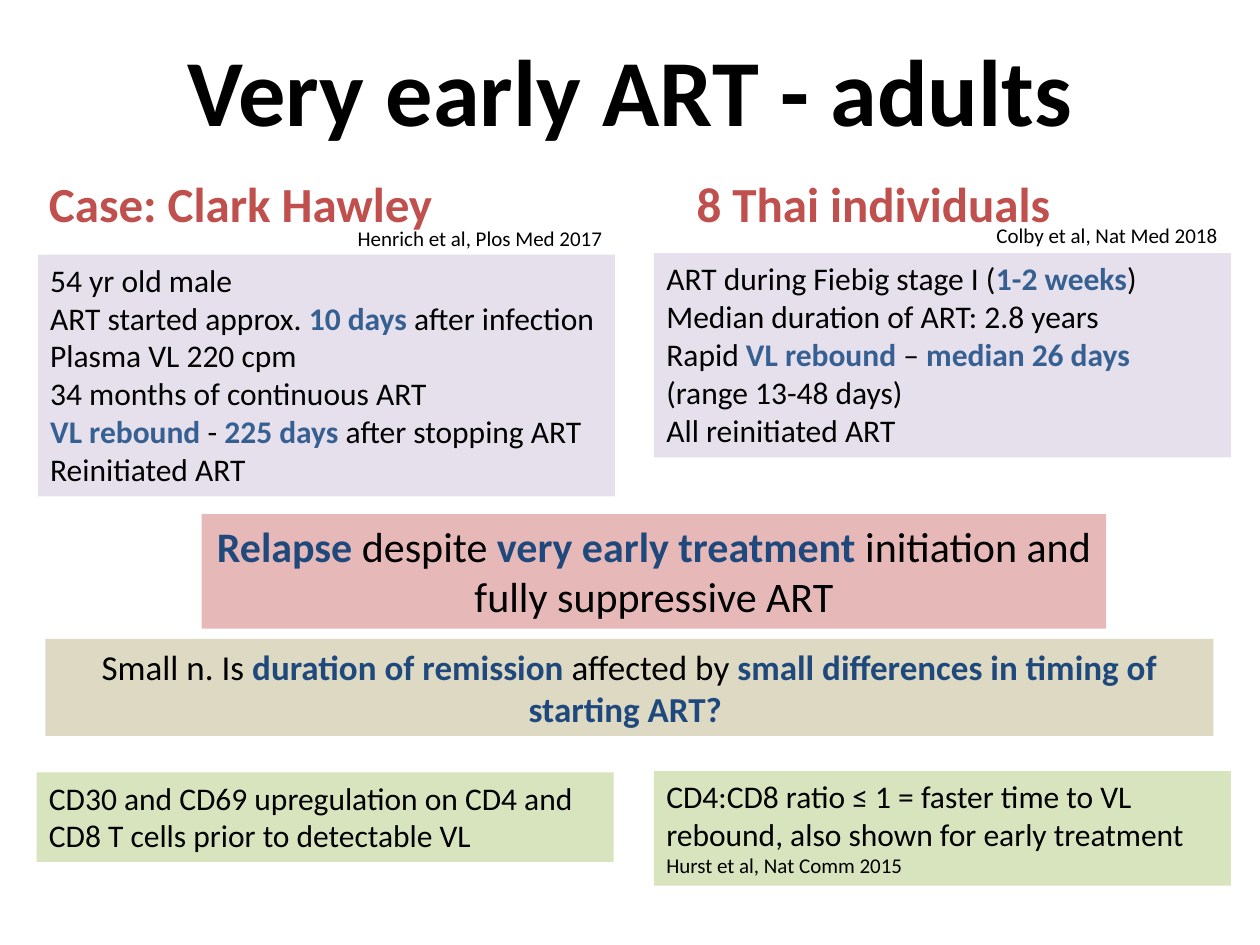
from dataclasses import dataclass

from pptx import Presentation
from pptx.dml.color import RGBColor
from pptx.enum.shapes import MSO_SHAPE
from pptx.enum.text import MSO_ANCHOR, MSO_AUTO_SIZE, PP_ALIGN
from pptx.util import Inches, Pt


@dataclass(frozen=True)
class Theme:
    font: str = "Calibri"
    ink: str = "000000"
    heading: str = "C0504D"
    finding: str = "376092"
    message: str = "1F497D"
    lilac: str = "E6E0EC"
    rose: str = "E6B9B8"
    sand: str = "DDD9C3"
    green: str = "D7E4BD"
    title_size: int = 54
    heading_size: int = 28
    relapse_size: int = 24
    question_size: int = 20
    body_size: int = 18
    citation_size: int = 12


class SlideBuilder:
    def __init__(self, slide, theme):
        self.slide = slide
        self.theme = theme

    def style(self, run, size, color, bold=False):
        run.font.name = self.theme.font
        run.font.size = Pt(size)
        run.font.bold = bold
        run.font.color.rgb = RGBColor.from_string(color)

    def label(self, text, place, size, color, bold=False):
        box = self.slide.shapes.add_textbox(*map(Inches, place))
        frame = box.text_frame
        frame.word_wrap = True
        frame.text = text
        self.style(frame.paragraphs[0].runs[0], size, color, bold)
        return frame

    def title(self, text, place):
        frame = self.label(text, place, self.theme.title_size, self.theme.ink, True)
        frame.vertical_anchor = MSO_ANCHOR.MIDDLE
        frame.paragraphs[0].alignment = PP_ALIGN.CENTER

    def heading(self, text, place):
        self.label(text, place, self.theme.heading_size, self.theme.heading, True)

    def citation(self, text, place):
        self.label(text, place, self.theme.citation_size, self.theme.ink)

    def panel(self, lines, place, fill, size, accent, align=PP_ALIGN.LEFT, source=""):
        panel = self.slide.shapes.add_shape(MSO_SHAPE.RECTANGLE, *map(Inches, place))
        panel.shadow.inherit = False
        panel.fill.solid()
        panel.fill.fore_color.rgb = RGBColor.from_string(fill)
        panel.line.fill.background()
        frame = panel.text_frame
        frame.word_wrap = True
        frame.auto_size = MSO_AUTO_SIZE.SHAPE_TO_FIT_TEXT
        frame.vertical_anchor = MSO_ANCHOR.TOP
        frame.text = "\n".join(lines)
        for paragraph in frame.paragraphs:
            paragraph.alignment = align
            pieces = paragraph.text.split("*")
            paragraph.clear()
            for index, piece in enumerate(pieces):
                if piece:
                    run = paragraph.add_run()
                    run.text = piece
                    strong = index % 2 == 1
                    self.style(run, size, accent if strong else self.theme.ink, strong)
        if source:
            run = frame.paragraphs[-1].add_run()
            run.text = source
            self.style(run, self.theme.citation_size, self.theme.ink)

    def study(self, lines, place):
        self.panel(lines, place, self.theme.lilac, self.theme.body_size, self.theme.finding)

    def marker(self, text, place, source=""):
        self.panel([text], place, self.theme.green, self.theme.body_size,
                   self.theme.finding, source=source)

    def message(self, text, place, fill, size):
        self.panel([text], place, fill, size, self.theme.message, PP_ALIGN.CENTER)


def main():
    deck = Presentation()
    deck.slide_width, deck.slide_height = Inches(10), Inches(7.5)
    theme = Theme()
    builder = SlideBuilder(deck.slides.add_slide(deck.slide_layouts[6]), theme)

    builder.title("Very early ART - adults", (0.5, 0.08, 9, 1.25))
    builder.citation("Colby et al, Nat Med 2018", (7.81, 1.72, 2.08, 0.3))
    builder.citation("Henrich et al, Plos Med 2017", (2.74, 1.74, 2.25, 0.3))
    builder.heading("Case: Clark Hawley", (0.29, 1.33, 3.58, 0.57))
    builder.heading("8 Thai individuals", (5.43, 1.33, 3.42, 0.57))

    builder.study([
        "54 yr old male",
        "ART started approx. *10 days *after infection",
        "Plasma VL 220 cpm",
        "34 months of continuous ART",
        "*VL rebound *- *225 days *after stopping ART Reinitiated ART",
    ], (0.3, 2.02, 4.58, 1.92))
    builder.study([
        "ART during Fiebig stage I (*1-2 weeks*)",
        "Median duration of ART: 2.8 years",
        "Rapid *VL rebound *– *median 26 days *(range 13-48 days)",
        "All reinitiated ART",
    ], (5.19, 2.01, 4.58, 1.62))

    builder.message(
        "Small n. Is *duration of remission *affected by "
        "*small differences in timing of starting ART? *",
        (0.36, 5.07, 9.27, 0.77), theme.sand, theme.question_size)
    builder.marker(
        "CD30 and CD69 upregulation on CD4 and CD8 T cells prior to detectable VL",
        (0.29, 6.13, 4.58, 0.71))
    builder.marker(
        "CD4:CD8 ratio ≤ 1 = faster time to VL rebound, also shown for early treatment ",
        (5.19, 6.12, 4.58, 0.91), "Hurst et al, Nat Comm 2015")
    builder.message(
        "*Relapse* despite *very early treatment *initiation and fully suppressive ART",
        (1.6, 4.08, 7.18, 0.91), theme.rose, theme.relapse_size)

    deck.save("out.pptx")


if __name__ == "__main__":
    main()
